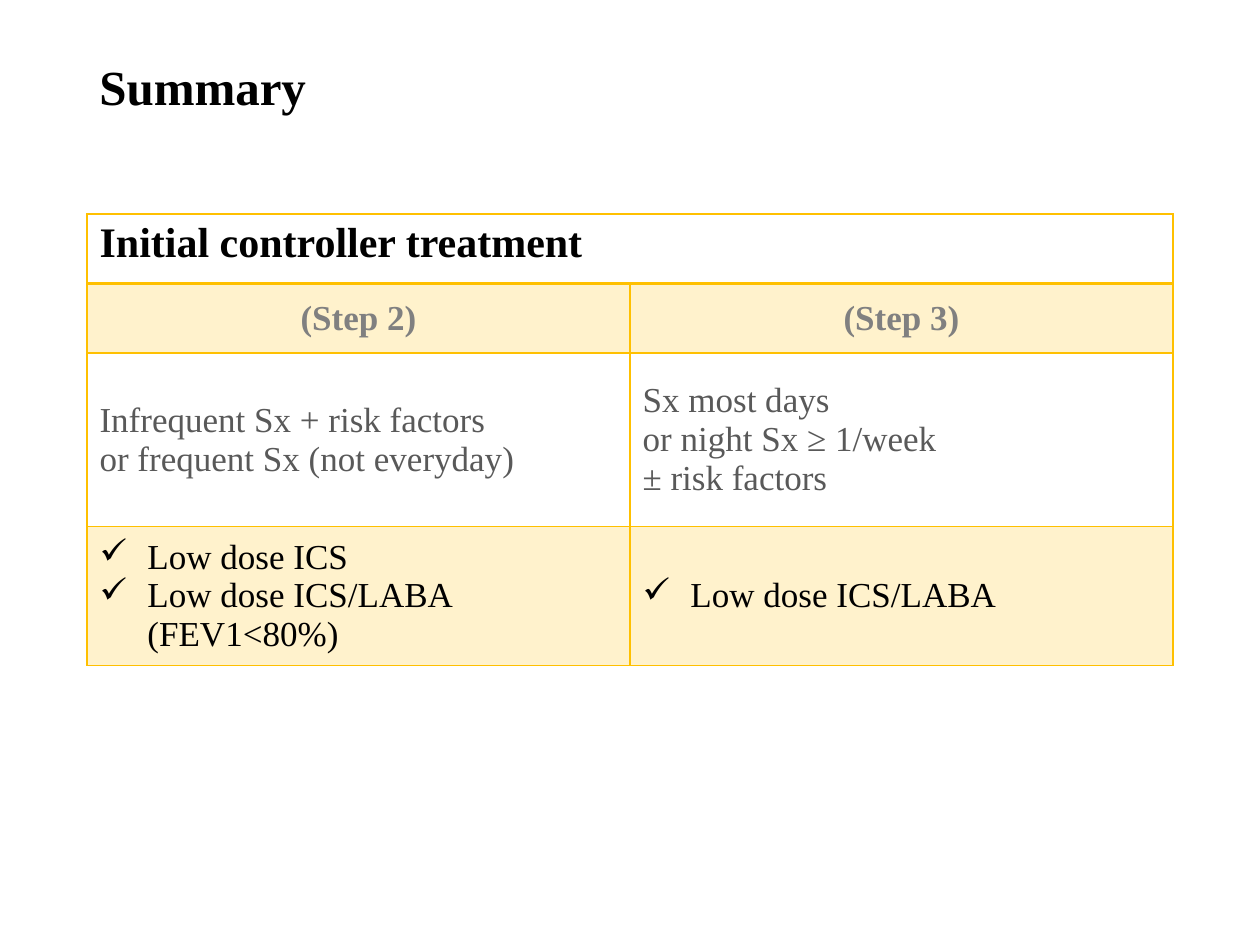
import pptx
import pptx.dml.color
import pptx.enum.text
import pptx.oxml
import pptx.oxml.ns
import pptx.util
from lxml import etree

SLIDE_WIDTH, SLIDE_HEIGHT = 10, 7.5
MARGIN = 0.069 * SLIDE_WIDTH
CONTENT_WIDTH = SLIDE_WIDTH - 2 * MARGIN
FONT = "Times New Roman"
COLORS = {"text": "000000", "step": "808080", "symptom": "595959", "gold": "FFC000"}
TINT_ALPHA = 20
BULLET_INDENT = 0.38
ROW_HEIGHTS = [0.55, 0.55, 1.38, 0.96]
ALIGN = pptx.enum.text.PP_ALIGN
MIDDLE = pptx.enum.text.MSO_ANCHOR.MIDDLE

# Format and lines of each cell below the heading, row by row
BODY_ROWS = [
    ({"color": "step", "bold": True, "align": ALIGN.CENTER}, True,
     [["(Step 2)"], ["(Step 3)"]]),
    ({"color": "symptom"}, False,
     [["Infrequent Sx + risk factors", "or frequent Sx (not everyday)"],
      ["Sx most days", "or night Sx ≥ 1/week", "± risk factors"]]),
    ({"bullet": "✓"}, True,
     [["Low dose ICS", "Low dose ICS/LABA (FEV1<80%)"], ["Low dose ICS/LABA"]]),
]


def add_element(parent, tag, **attributes):
    element = etree.SubElement(parent, pptx.oxml.ns.qn(tag))
    for name, value in attributes.items():
        element.set(name, str(value))
    return element


def write_text(text_frame, lines, size=20, color="text", bold=False,
               align=ALIGN.LEFT, bullet=None, line_spacing=None):
    for index, line in enumerate(lines):
        paragraph = text_frame.paragraphs[0] if index == 0 else text_frame.add_paragraph()
        paragraph.alignment = align
        if line_spacing:
            paragraph.line_spacing = line_spacing
        if bullet:
            properties = paragraph._p.get_or_add_pPr()
            indent = pptx.util.Inches(BULLET_INDENT)
            properties.set("marL", str(indent))
            properties.set("indent", str(-indent))
            add_element(properties, "a:buChar", char=bullet)
        run = paragraph.add_run()
        run.text = line
        run.font.name = FONT
        run.font.size = pptx.util.Pt(size)
        run.font.bold = bold
        run.font.color.rgb = pptx.dml.color.RGBColor.from_string(COLORS[color])


def format_cell(cell, tinted=False, bottom=1, top=1):
    """Set borders (widths in points) and then the fill, in schema order."""
    properties = cell._tc.get_or_add_tcPr()
    widths = {"a:lnL": 1, "a:lnR": 1, "a:lnT": top, "a:lnB": bottom}
    for tag, width in widths.items():
        line = add_element(properties, tag, w=pptx.util.Pt(width))
        line_fill = add_element(line, "a:solidFill")
        add_element(line_fill, "a:srgbClr", val=COLORS["gold"])
    if tinted:
        cell_fill = add_element(properties, "a:solidFill")
        color = add_element(cell_fill, "a:srgbClr", val=COLORS["gold"])
        add_element(color, "a:alpha", val=TINT_ALPHA * 1000)
    else:
        add_element(properties, "a:noFill")


def add_title(slide, left, top, width, height):
    box = slide.shapes.add_textbox(*map(pptx.util.Inches, (left, top, width, height)))
    box.text_frame.word_wrap = True
    box.text_frame.vertical_anchor = MIDDLE
    write_text(box.text_frame, ["Summary"], size=28, bold=True, line_spacing=0.9)


def add_treatment_table(slide, left, top, width, height):
    frame = slide.shapes.add_table(
        len(ROW_HEIGHTS), 2, *map(pptx.util.Inches, (left, top, width, height)))
    table = frame.table
    table.first_row = False
    table.horz_banding = False
    for column in table.columns:
        column.width = pptx.util.Inches(width / 2)
    for row, row_height in zip(table.rows, ROW_HEIGHTS):
        row.height = pptx.util.Inches(row_height)

    # Heading across both columns
    heading = table.cell(0, 0)
    heading.merge(table.cell(0, 1))
    for column in range(2):
        format_cell(table.cell(0, column), bottom=2)
    write_text(heading.text_frame, ["Initial controller treatment"], size=24, bold=True)

    # Steps, symptoms and treatments
    for row, (text_format, tinted, contents) in enumerate(BODY_ROWS, start=1):
        for column, lines in enumerate(contents):
            cell = table.cell(row, column)
            cell.vertical_anchor = MIDDLE
            format_cell(cell, tinted, top=2 if row == 1 else 1)
            write_text(cell.text_frame, lines, **text_format)


def main():
    presentation = pptx.Presentation()
    presentation.slide_width = pptx.util.Inches(SLIDE_WIDTH)
    presentation.slide_height = pptx.util.Inches(SLIDE_HEIGHT)
    slide = presentation.slides.add_slide(presentation.slide_layouts[6])
    add_title(slide, MARGIN, 0.4, CONTENT_WIDTH, 0.62)
    add_treatment_table(slide, MARGIN, 1.7, CONTENT_WIDTH, sum(ROW_HEIGHTS))
    presentation.save("out.pptx")


if __name__ == "__main__":
    main()
